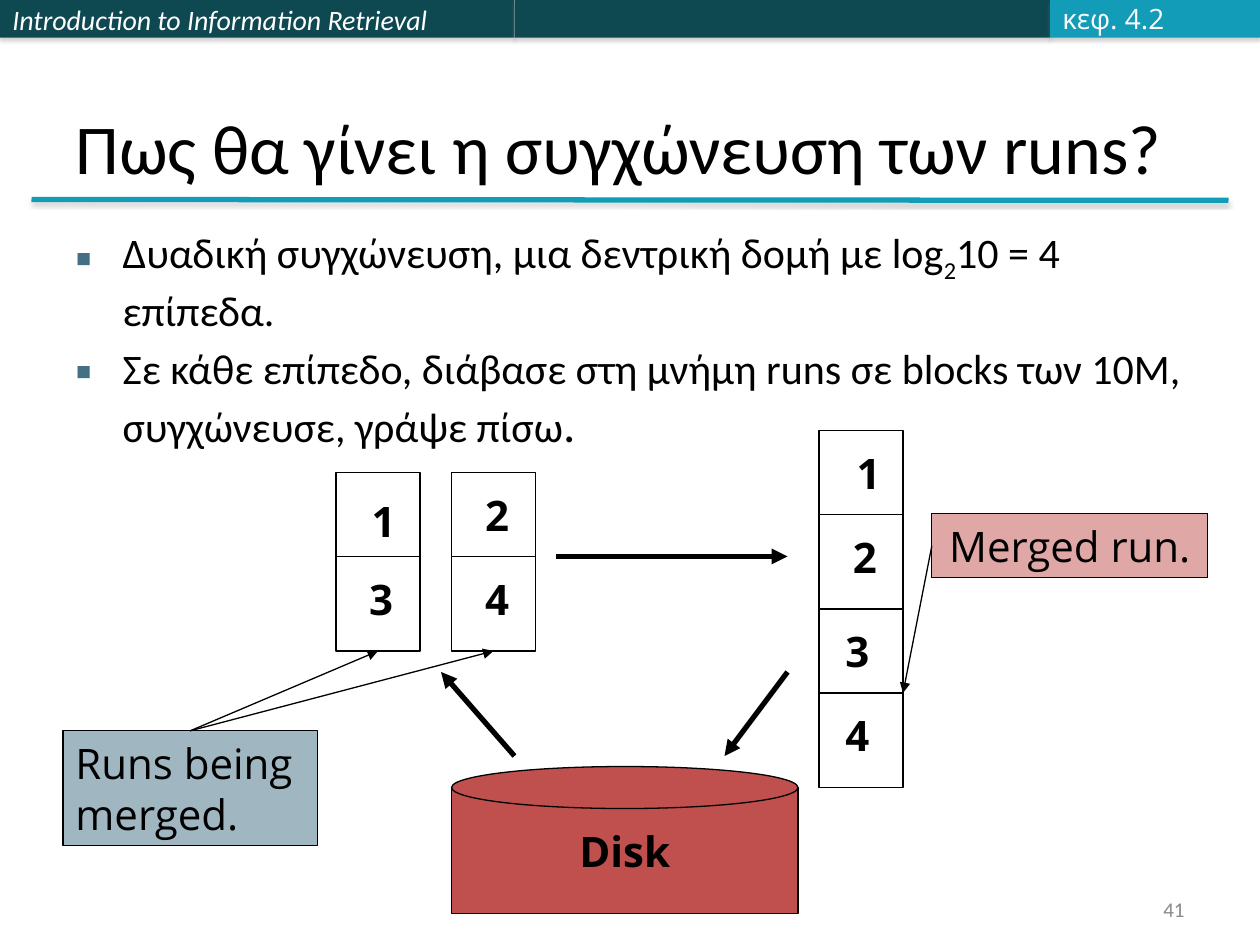
import pptx
import pptx.util
import pptx.dml.color
import pptx.enum.shapes
import pptx.enum.text
import pptx.oxml
import pptx.oxml.ns

Pt = pptx.util.Pt
SHAPE = pptx.enum.shapes.MSO_SHAPE
ALIGN = pptx.enum.text.PP_ALIGN
ANCHOR = pptx.enum.text.MSO_ANCHOR
qn = pptx.oxml.ns.qn

COLORS = {
    "black": "000000", "white": "FFFFFF", "header": "0E4851", "accent": "139CB7",
    "red": "C0504D", "slate": "437085", "section": "FBFCFF", "grey": "898989",
    "shadow": "808080",
}
CELL = 48           # width of a run, and height of its upper block
RUN_HEIGHT = 102


def rgb(name):
    return pptx.dml.color.RGBColor.from_string(COLORS[name])


def add_xml(parent, tag, **attributes):
    child = pptx.oxml.parse_xml(f"<a:{tag} {pptx.oxml.ns.nsdecls('a')}/>")
    for name, value in attributes.items():
        child.set(name, str(value))
    parent.append(child)
    return child


def add_effects(item, shadow_alpha=None):
    """Give an element an empty effect list, or one with a soft drop shadow."""
    properties = item._element.spPr
    for effects in properties.findall(qn("a:effectLst")):
        properties.remove(effects)
    effects = add_xml(properties, "effectLst")
    if shadow_alpha:
        shadow = add_xml(effects, "outerShdw", blurRad=Pt(2), dist=Pt(1.8),
                         dir=5400000, rotWithShape=0)
        color = add_xml(shadow, "srgbClr", val=COLORS["shadow"])
        add_xml(color, "alpha", val=shadow_alpha * 1000)


def add_run(paragraph, text, size, font="Open Sans", color="black", bold=False, italic=False):
    run = paragraph.add_run()
    run.text = text
    run.font.size = Pt(size)
    run.font.name = font
    run.font.bold = bold
    run.font.italic = italic
    run.font.color.rgb = rgb(color)
    return run


def write(shape, text, size=24, align=ALIGN.CENTER, wrap=False, **style):
    frame = shape.text_frame
    frame.word_wrap = wrap
    frame.vertical_anchor = ANCHOR.MIDDLE
    for index, line in enumerate(text.split("\n")):
        paragraph = frame.add_paragraph() if index else frame.paragraphs[0]
        paragraph.alignment = align
        add_run(paragraph, line, size, **style)


def add_box(slide, left, top, width, height, fill, kind=SHAPE.RECTANGLE, alpha=None, outline=True):
    box = slide.shapes.add_shape(kind, Pt(left), Pt(top), Pt(width), Pt(height))
    box.shadow.inherit = False
    box.fill.solid()
    box.fill.fore_color.rgb = rgb(fill)
    if alpha:
        color = box._element.spPr.find(qn("a:solidFill")).find(qn("a:srgbClr"))
        add_xml(color, "alpha", val=alpha * 1000)
    if outline:
        box.line.color.rgb = rgb("black")
        box.line.width = Pt(0.75)
    else:
        box.line.fill.background()
    return box


def add_text(slide, left, top, width, height, text, **style):
    box = slide.shapes.add_textbox(Pt(left), Pt(top), Pt(width), Pt(height))
    write(box, text, **style)


def add_line(slide, x1, y1, x2, y2, width=0.75, color="black", arrow=False, shadow_alpha=None):
    line = slide.shapes.add_connector(pptx.enum.shapes.MSO_CONNECTOR.STRAIGHT,
                                      Pt(x1), Pt(y1), Pt(x2), Pt(y2))
    line.line.color.rgb = rgb(color)
    line.line.width = Pt(width)
    if arrow:
        add_xml(line.line._get_or_add_ln(), "tailEnd", type="triangle")
    add_effects(line, shadow_alpha)
    return line


def add_run_blocks(slide, left, top, labels):
    """A run of two blocks; labels holds (text, x offset, y offset)."""
    blocks = add_box(slide, left, top, CELL, RUN_HEIGHT, "white")
    add_line(slide, left, top + CELL, left + CELL, top + CELL)
    for text, dx, dy in labels:
        add_text(slide, left + dx, top + dy, 28, 36, text, bold=True)
    return blocks


def add_header(slide):
    bands = [(0, 294, "header"), (294, 306, "header"), (600, 120, "accent")]
    for left, width, fill in bands:
        band = add_box(slide, left, 0, width, 21.6, fill, outline=False)
        add_effects(band, shadow_alpha=35)
        if left == 0:
            write(band, "Introduction to Information Retrieval", 16, ALIGN.LEFT, wrap=True,
                  font="Calibri", color="white", italic=True)
    add_line(slide, 18, 114, 702, 114.5, 3, "accent", shadow_alpha=38)
    add_text(slide, 600, -2.9, 76, 26.6, "κεφ. 4.2", size=16, align=ALIGN.LEFT, color="section")


def add_title(slide):
    title = slide.shapes.title
    title.left, title.top, title.width, title.height = Pt(36), Pt(21.6), Pt(648), Pt(90)
    write(title, "Πως θα γίνει η συγχώνευση των runs?", 40, ALIGN.LEFT, wrap=True, font="Calibri")
    title.text_frame.vertical_anchor = ANCHOR.BOTTOM
    title.text_frame.auto_size = pptx.enum.text.MSO_AUTO_SIZE.NONE


def add_bullets(slide):
    bullets = [
        [("Δυαδική συγχώνευση, μια δεντρική δομή με log", 24, 0), ("2", 24, -25000),
         ("10 = 4 επίπεδα.", 24, 0)],
        [("Σε κάθε επίπεδο, διάβασε στη μνήμη runs σε blocks των 10M, "
          "συγχώνευσε, γράψε πίσω", 24, 0), (".", 28, 0)],
    ]
    frame = slide.shapes.add_textbox(Pt(36), Pt(126), Pt(648), Pt(390)).text_frame
    frame.word_wrap = True
    for index, pieces in enumerate(bullets):
        paragraph = frame.add_paragraph() if index else frame.paragraphs[0]
        paragraph.space_before = Pt(4.8)
        properties = paragraph._p.get_or_add_pPr()
        properties.set("marL", str(Pt(27)))
        properties.set("indent", str(-Pt(27)))
        add_xml(add_xml(properties, "buClr"), "srgbClr", val=COLORS["slate"])
        add_xml(properties, "buFont", typeface="Open Sans")
        add_xml(properties, "buChar", char="▪")
        for text, size, baseline in pieces:
            run = add_run(paragraph, text, size, "Calibri")
            if baseline:
                run.font._element.set("baseline", str(baseline))


def add_merge_diagram(slide):
    # Runs being merged
    first_run = add_run_blocks(slide, 192, 270, [("1", 13.2, 9.4), ("3", 11.8, 54)])
    second_run = add_run_blocks(slide, 258, 270, [("2", 12, 6), ("4", 12, 54)])

    # Disk
    disk = add_box(slide, 258, 450, 198, 72, "red")
    write(disk, "Disk", bold=True)
    add_box(slide, 258, 438, 198, 24, "red", kind=SHAPE.OVAL)

    # Data flow: disk to memory, merge, back to disk
    for ends in [(294, 432, 252, 384), (318, 318, 450, 318), (450, 384, 414, 432)]:
        add_line(slide, *ends, width=3, arrow=True)

    # Merged run
    add_run_blocks(slide, 468, 246, [("1", 14.4, 6), ("2", 12.2, 54)])
    add_run_blocks(slide, 468, 246 + RUN_HEIGHT, [("3", 8, 6), ("4", 8, 54)])

    # Callouts
    source_note = add_box(slide, 36, 417.6, 145.4, 65.5, "slate", alpha=50)
    write(source_note, "Runs being\nmerged.", align=ALIGN.LEFT)
    for run_blocks in (first_run, second_run):
        pointer = add_line(slide, 108.7, 417.6, 216, 372, arrow=True)
        pointer.begin_connect(source_note, 0)
        pointer.end_connect(run_blocks, 2)
    merged_note = add_box(slide, 532.5, 293.5, 157.7, 36.7, "red", alpha=50)
    write(merged_note, "Merged run.")
    pointer = add_line(slide, 532.5, 312, 516, 396, arrow=True)
    pointer.begin_connect(merged_note, 1)


def main():
    deck = pptx.Presentation()
    deck.slide_width, deck.slide_height = Pt(720), Pt(540)
    slide = deck.slides.add_slide(deck.slide_layouts[5])
    add_header(slide)
    add_title(slide)
    add_bullets(slide)
    add_merge_diagram(slide)
    add_text(slide, 516, 510, 168, 19.4, "41", size=12, align=ALIGN.RIGHT, wrap=True,
             font="Calibri", color="grey")
    deck.save("out.pptx")


if __name__ == "__main__":
    main()
